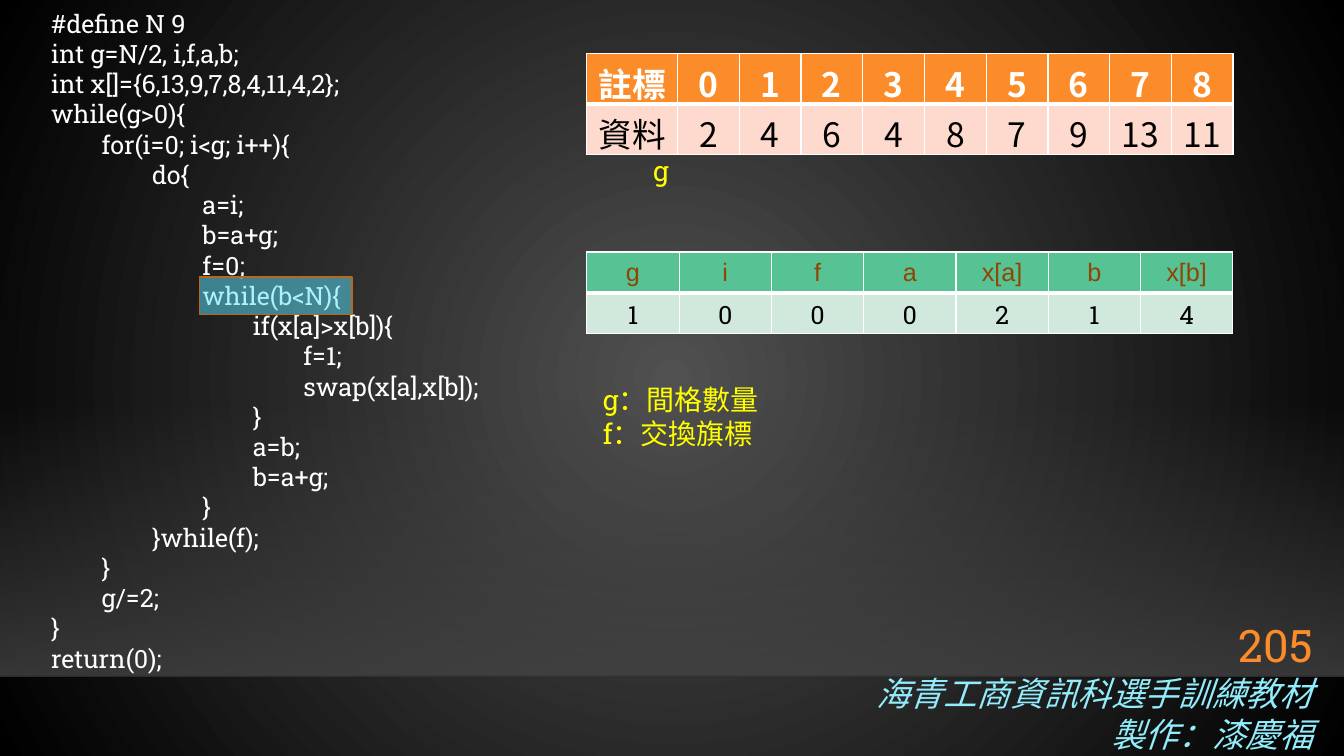
import dataclasses

import lxml.etree
import pptx
import pptx.dml.color
import pptx.enum.shapes
import pptx.enum.text
import pptx.oxml
import pptx.oxml.ns
import pptx.util

Inches = pptx.util.Inches
ALIGN = pptx.enum.text.PP_ALIGN
ANCHOR = pptx.enum.text.MSO_ANCHOR
WIDTH, HEIGHT = 13.33, 7.5
TABLE_LEFT, TABLE_WIDTH = 5.82, 6.41
TAB = 0.5

CODE = """#define N 9
int g=N/2, i,f,a,b;
int x[]={6,13,9,7,8,4,11,4,2};
while(g>0){
\tfor(i=0; i<g; i++){
\t\tdo{
\t\t\ta=i;
\t\t\tb=a+g;
\t\t\tf=0;
\t\t\twhile(b<N){
\t\t\t\tif(x[a]>x[b]){
\t\t\t\t\tf=1;
\t\t\t\t\tswap(x[a],x[b]);
\t\t\t\t}
\t\t\t\ta=b;
\t\t\t\tb=a+g;
\t\t\t}
\t\t}while(f);
\t}
\tg/=2;
}
return(0);"""


@dataclasses.dataclass(frozen=True)
class Theme:
    """Colours, fonts and type sizes of the slide."""
    white: str = "FFFFFF"
    black: str = "000000"
    glow: str = "505050"
    floor: str = "454545"
    floor_line: str = "000001"
    orange: str = "FB8C29"
    peach: str = "FDDACD"
    green: str = "57C293"
    mint: str = "D1E9DC"
    brown: str = "8F4503"
    yellow: str = "FFFF00"
    sky: str = "91EDFC"
    marker: str = "5AE4FB"
    marker_line: str = "BA681E"
    slab: str = "Roboto Slab"
    sans: str = "Arial"
    cjk: str = "Noto Sans CJK SC"
    code_size: int = 18
    note_size: int = 20
    large_size: int = 24
    number_size: int = 32


THEME = Theme()


def rgb(color):
    """Turn a hex string into a colour."""
    return pptx.dml.color.RGBColor.from_string(color)


def add_child(parent, tag, **attributes):
    """Append a drawing element and return it."""
    return lxml.etree.SubElement(parent, pptx.oxml.ns.qn(tag), attributes)


def add_alpha(color_format_parent, percent):
    """Make the colour inside an element partly transparent."""
    color = next(color_format_parent.iter(pptx.oxml.ns.qn("a:srgbClr")))
    add_child(color, "a:alpha", val=str(percent * 1000))


def style_text(frame, size, color, font, align=ALIGN.LEFT, bold=False, italic=False):
    """Format every run of a text frame."""
    for para in frame.paragraphs:
        para.alignment = align
        for span in para.runs:
            span.font.size = pptx.util.Pt(size)
            span.font.name = font
            span.font.bold = bold
            span.font.italic = italic
            span.font.color.rgb = rgb(color)
            add_child(span.font._element, "a:ea", typeface=THEME.cjk)


def add_text(page, box, text, size, color, font, **style):
    """Place a wrapping text box and return its frame."""
    frame = page.shapes.add_textbox(*map(Inches, box)).text_frame
    frame.word_wrap = True
    frame.text = text
    style_text(frame, size, color, font, **style)
    return frame


def add_backdrop(page, box):
    """Draw the round glow, the lit floor and its edge."""
    left, top, width, height = box
    fill = page.background.fill
    fill.gradient()
    for stop, color in zip(fill.gradient_stops, (THEME.glow, THEME.black)):
        stop.color.rgb = rgb(color)
    gradient = next(page.background._cSld.iter(pptx.oxml.ns.qn("a:gradFill")))
    gradient.remove(gradient.find(pptx.oxml.ns.qn("a:lin")))
    circle = add_child(gradient, "a:path", path="circle")
    add_child(circle, "a:fillToRect", l="50000", t="50000", r="50000", b="50000")

    floor = page.shapes.add_shape(
        pptx.enum.shapes.MSO_SHAPE.RECTANGLE, *map(Inches, box))
    floor.shadow.inherit = False
    floor.line.fill.background()
    floor.fill.gradient()
    floor.fill.gradient_angle = 270
    stops = floor._element.spPr.iter(pptx.oxml.ns.qn("a:gs"))
    for stop, element, percent in zip(floor.fill.gradient_stops, stops, (0, 80)):
        stop.color.rgb = rgb(THEME.floor)
        add_alpha(element, percent)

    bottom = Inches(top + height)
    edge = page.shapes.add_connector(
        pptx.enum.shapes.MSO_CONNECTOR.STRAIGHT,
        Inches(left), bottom, Inches(left + width), bottom)
    edge.line.color.rgb = rgb(THEME.floor_line)
    edge.line.width = pptx.util.Pt(1)
    add_alpha(edge._element.spPr, 20)
    add_child(edge._element.spPr, "a:effectLst")


def add_borders(cell, widths):
    """Give a cell white borders of the given widths."""
    properties = cell._tc.get_or_add_tcPr()
    for side, points in zip("LRTB", widths):
        line = add_child(properties, f"a:ln{side}", w=str(pptx.util.Pt(points)))
        add_child(add_child(line, "a:solidFill"), "a:srgbClr", val=THEME.white)


def add_grid(page, box, rows, first_width, fills, styles, anchor, margins):
    """Place a table with a header row and one row of values."""
    left, top, width, height = box
    columns = len(rows[0])
    table = page.shapes.add_table(len(rows), columns, *map(Inches, box)).table
    other_width = (width - first_width) / (columns - 1)
    for index, column in enumerate(table.columns):
        column.width = Inches(other_width if index else first_width)
    for row, values in enumerate(rows):
        table.rows[row].height = Inches(height / len(rows))
        for column, value in enumerate(values):
            cell = table.cell(row, column)
            add_borders(cell, (1, 1, 3, 1) if row else (1, 1, 1, 3))
            cell.fill.solid()
            cell.fill.fore_color.rgb = rgb(fills[row])
            cell.vertical_anchor = anchor
            cell.margin_top, cell.margin_bottom = map(Inches, margins)
            cell.text_frame.text = value
            style_text(cell.text_frame, align=ALIGN.CENTER, **styles[row])


def add_code(page, box):
    """Place the listing and mark the line being run."""
    left, top, width, height = box
    frame = add_text(page, box, CODE, THEME.code_size, THEME.white, THEME.slab)
    for para in frame.paragraphs:
        stops = add_child(para._p.get_or_add_pPr(), "a:tabLst")
        for level in range(1, 6):
            add_child(stops, "a:tab", pos=str(Inches(level * TAB)), algn="l")
    marker = page.shapes.add_shape(
        pptx.enum.shapes.MSO_SHAPE.RECTANGLE,
        *map(Inches, (left + 1.57, top + 2.72, 1.51, 0.37)))
    marker.shadow.inherit = False
    marker.fill.solid()
    marker.fill.fore_color.rgb = rgb(THEME.marker)
    add_alpha(marker._element.spPr, 50)
    marker.line.color.rgb = rgb(THEME.marker_line)
    marker.line.width = pptx.util.Pt(1.25)


def add_array(page, box):
    """Show the array with its indexes and the gap label."""
    left, top, width, height = box
    base = {"size": THEME.large_size, "font": THEME.cjk}
    rows = (["註標", *map(str, range(9))], ["資料", *"2 4 6 4 8 7 9 13 11".split()])
    styles = ({**base, "color": THEME.white, "bold": True}, {**base, "color": THEME.black})
    add_grid(page, box, rows, 0.9, (THEME.orange, THEME.peach), styles,
             ANCHOR.TOP, (0.05, 0))
    add_text(page, (left + 0.56, top + 0.94, 0.38, 0.44), "g",
             THEME.note_size, THEME.yellow, THEME.slab)


def add_variables(page, box):
    """Show the variables and explain two of them."""
    left, top, width, height = box
    rows = ("g i f a x[a] b x[b]".split(), "1 0 0 0 2 1 4".split())
    styles = ({"size": THEME.code_size, "font": THEME.sans, "color": THEME.brown},
              {"size": THEME.code_size, "font": THEME.slab, "color": THEME.black})
    add_grid(page, box, rows, width / 7, (THEME.green, THEME.mint), styles,
             ANCHOR.MIDDLE, (0.05, 0.05))
    add_text(page, (left + 0.06, top + 1.25, 1.78, 0.77), "g：間格數量\nf：交換旗標",
             THEME.note_size, THEME.yellow, THEME.slab)


def add_footer(page, box):
    """Place the slide number over the course credit."""
    left, top, width, height = box
    add_text(page, (left + width - 1.29, top, 1.29, 0.55), "205",
             THEME.number_size, THEME.orange, THEME.slab, align=ALIGN.RIGHT)
    add_text(page, (left, top + 0.55, width, height - 0.55),
             "海青工商資訊科選手訓練教材\n製作：漆慶福",
             THEME.large_size, THEME.sky, THEME.cjk, align=ALIGN.RIGHT, italic=True)


def main():
    """Build the slide and save it."""
    deck = pptx.Presentation()
    deck.slide_width, deck.slide_height = Inches(WIDTH), Inches(HEIGHT)
    page = deck.slides.add_slide(deck.slide_layouts[6])
    add_backdrop(page, (0, 3.96, WIDTH, 2.75))
    add_footer(page, (8.54, 6.08, 4.58, 1.46))
    add_array(page, (TABLE_LEFT, 0.53, TABLE_WIDTH, 1))
    add_code(page, (0.41, 0.03, 5.44, 6.77))
    add_variables(page, (TABLE_LEFT, 2.5, TABLE_WIDTH, 0.81))
    add_footer_free = None
    deck.save("out.pptx")


if __name__ == "__main__":
    main()
